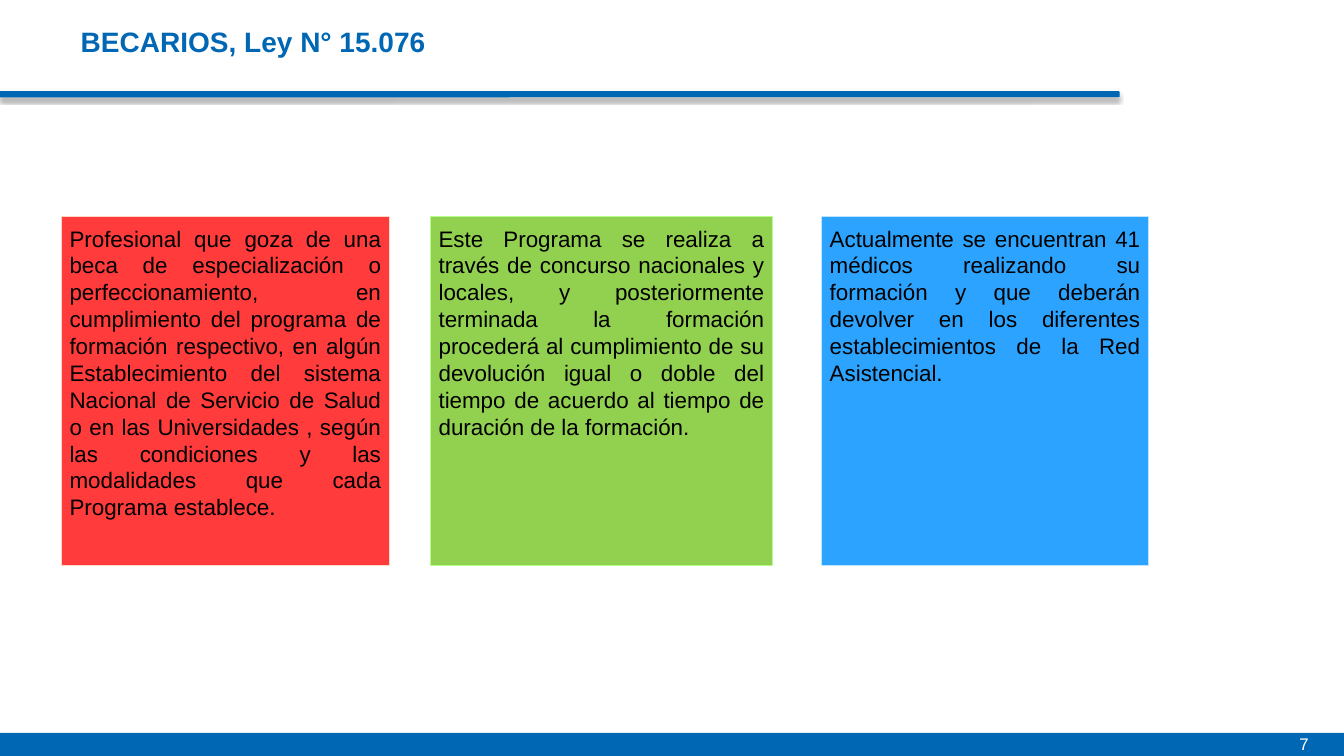
"""Build the slide on scholarship holders under Ley N° 15.076."""
import lxml.etree
import pptx
import pptx.dml.color
import pptx.enum.shapes
import pptx.enum.text
import pptx.oxml
import pptx.util

PX = 9144
BLUE = "0067B4"
SHAPES = pptx.enum.shapes.MSO_SHAPE


def color(value):
    return pptx.dml.color.RGBColor.from_string(value)


def write_text(shape, text, size, font_color, inset, bold=False):
    frame = shape.text_frame
    frame.text = text
    frame.word_wrap = True
    frame.vertical_anchor = pptx.enum.text.MSO_ANCHOR.TOP
    frame.margin_left = frame.margin_right = inset * PX
    frame.margin_top = frame.margin_bottom = inset * PX
    paragraph = frame.paragraphs[0]
    paragraph.alignment = pptx.enum.text.PP_ALIGN.LEFT
    font = paragraph.runs[0].font
    font.name = "Arial"
    font.size = pptx.util.Pt(size)
    font.bold = bold
    font.color.rgb = color(font_color)
    return paragraph


presentation = pptx.Presentation()
presentation.slide_width = 1333 * PX
presentation.slide_height = 750 * PX
slide = presentation.slides.add_slide(presentation.slide_layouts[6])

title_rule = slide.shapes.add_shape(SHAPES.ROUNDED_RECTANGLE, 0, 91 * PX, 1110 * PX, 5 * PX)
title_rule.adjustments[0] = 0.12
title_rule.fill.solid()
title_rule.fill.fore_color.rgb = color(BLUE)
title_rule.line.color.rgb = color(BLUE)
title_rule.line.width = pptx.util.Pt(0.75)
title_rule.shadow.inherit = False
effects = title_rule.element.spPr.find(pptx.oxml.ns.qn("a:effectLst"))
shadow = lxml.etree.SubElement(
    effects, pptx.oxml.ns.qn("a:outerShdw"),
    blurRad="39370", dist="22860", dir="5400000", rotWithShape="0")
shadow_color = lxml.etree.SubElement(shadow, pptx.oxml.ns.qn("a:srgbClr"), val="000000")
lxml.etree.SubElement(shadow_color, pptx.oxml.ns.qn("a:alpha"), val="35000")

footer = slide.shapes.add_shape(SHAPES.RECTANGLE, 0, 727 * PX, 1333 * PX, 23 * PX)
footer.fill.solid()
footer.fill.fore_color.rgb = color(BLUE)
footer.line.fill.background()
footer.shadow.inherit = False

page_number = slide.shapes.add_textbox(1279 * PX, 723 * PX, 50 * PX, 27 * PX)
write_text(page_number, "7", 12, "FFFFFF", 10).runs[0]
page_number.text_frame.margin_top = page_number.text_frame.margin_bottom = 5 * PX

cards = [
    (61, 325, "FF3B3B", "FFD6C7",
     "Profesional que goza de una beca de especialización o perfeccionamiento, "
     "en cumplimiento del programa de formación respectivo, en algún "
     "Establecimiento del sistema Nacional de Servicio de Salud o en las "
     "Universidades , según las condiciones y las modalidades que cada "
     "Programa establece."),
    (427, 339, "92D050", "B2FF8B",
     "Este Programa se realiza a través de concurso nacionales y locales, y "
     "posteriormente terminada la formación procederá al cumplimiento de su "
     "devolución igual o doble del tiempo de acuerdo al tiempo de duración "
     "de la formación."),
    (815, 324, "2CA4FF", "BFE4FF",
     "Actualmente se encuentran 41 médicos realizando su formación y que "
     "deberán devolver en los diferentes establecimientos de la Red "
     "Asistencial."),
]
for left, width, fill, outline, text in cards:
    card = slide.shapes.add_shape(
        SHAPES.RECTANGLE, left * PX, 215 * PX, width * PX, 346 * PX)
    card.fill.solid()
    card.fill.fore_color.rgb = color(fill)
    card.line.color.rgb = color(outline)
    card.line.width = pptx.util.Pt(0.75)
    card.shadow.inherit = False
    paragraph = write_text(card, text, 16, "000000", 8)
    paragraph.alignment = pptx.enum.text.PP_ALIGN.JUSTIFY

title = slide.shapes.add_textbox(80 * PX, 24 * PX, 1060 * PX, 66 * PX)
write_text(title, "BECARIOS, Ley N° 15.076", 20, BLUE, 0, bold=True)

presentation.save("out.pptx")
